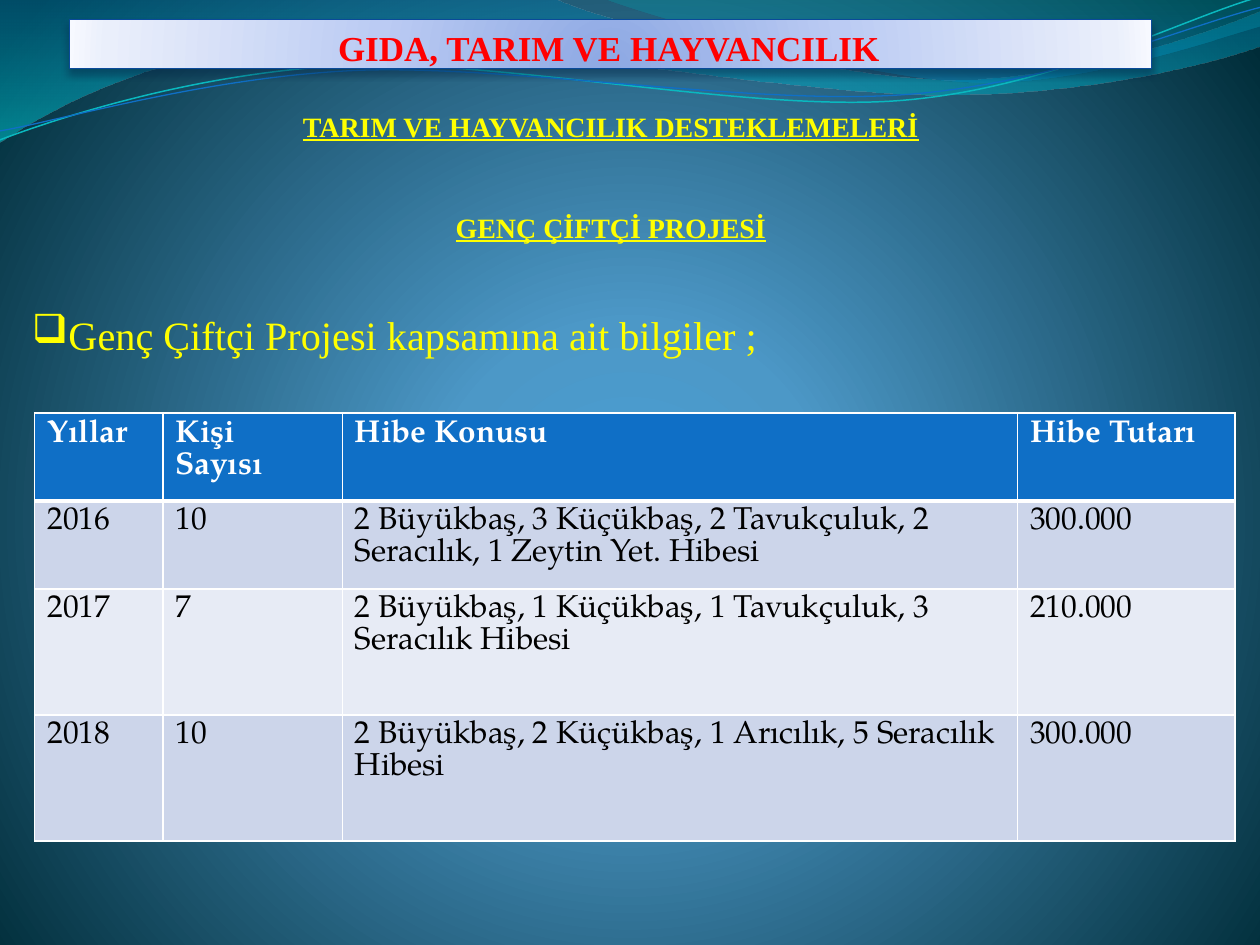
import math
from dataclasses import dataclass
from typing import Optional

import lxml.etree
import pptx
import pptx.dml.color
import pptx.enum.text
import pptx.oxml
import pptx.oxml.ns
import pptx.util

Cm, Pt = pptx.util.Cm, pptx.util.Pt
RGBColor = pptx.dml.color.RGBColor
ALIGN = pptx.enum.text.PP_ALIGN
qn = pptx.oxml.ns.qn
NAMESPACE = pptx.oxml.ns.nsdecls("a")

RED = RGBColor(0xFF, 0x00, 0x00)
YELLOW = RGBColor(0xFF, 0xFF, 0x00)
WHITE = RGBColor(0xFF, 0xFF, 0xFF)
BLACK = RGBColor(0x00, 0x00, 0x00)
BLUE = RGBColor(0x0F, 0x6F, 0xC6)
NAVY = RGBColor(0x0A, 0x4A, 0x9A)
TEAL = RGBColor(0x0A, 0xB8, 0xBF)
BAND_DARK = RGBColor(0xCC, 0xD5, 0xEA)
BAND_LIGHT = RGBColor(0xE7, 0xEB, 0xF5)
SHADOW = RGBColor(0x04, 0x27, 0x47)
SERIF = "Times New Roman"
TABLE_FONT = "TeX Gyre Pagella"

LINEAR_DOWN = '<a:lin ang="5400000" scaled="0"/>'
UNITS_PER_CM = 1000


@dataclass
class Stop:
    position: int
    color: RGBColor
    opacity: int = 100


@dataclass
class Wave:
    """Page points in cm; a pair is a straight step, six numbers a Bezier curve."""
    frame: tuple  # left, top, width, height before turning
    start: tuple
    steps: list
    gradient: Optional[list] = None
    line: Optional[RGBColor] = None
    width: float = 0
    rotation: float = 0


def circle_path(left: int, top: int, right: int, bottom: int) -> str:
    return (f'<a:path path="circle"><a:fillToRect l="{left}000" t="{top}000" '
            f'r="{right}000" b="{bottom}000"/></a:path>')


def set_gradient(fill, element, stops: list, direction: str) -> None:
    fill.gradient()
    old = element.find(".//" + qn("a:gradFill"))
    marks = "".join(
        f'<a:gs pos="{stop.position}000"><a:srgbClr val="{stop.color}">'
        f'<a:alpha val="{stop.opacity}000"/></a:srgbClr></a:gs>' for stop in stops)
    old.getparent().replace(old, pptx.oxml.parse_xml(
        f'<a:gradFill {NAMESPACE} rotWithShape="1"><a:gsLst>{marks}</a:gsLst>'
        f'{direction}</a:gradFill>'))


def point_xml(wave: Wave, x: float, y: float) -> str:
    """Turn a page point back into the unturned frame of the wave."""
    left, top, width, height = wave.frame
    angle = math.radians(-wave.rotation)
    dx, dy = x - left - width / 2, y - top - height / 2
    local_x = width / 2 + dx * math.cos(angle) - dy * math.sin(angle)
    local_y = height / 2 + dx * math.sin(angle) + dy * math.cos(angle)
    return f'<a:pt x="{round(local_x * UNITS_PER_CM)}" y="{round(local_y * UNITS_PER_CM)}"/>'


def draw_wave(page, wave: Wave) -> None:
    left, top, width, height = (value * UNITS_PER_CM for value in wave.frame)
    builder = page.shapes.build_freeform(left, top, scale=Cm(1) / UNITS_PER_CM)
    builder.add_line_segments([(left + width, top + height)], close=False)
    shape = builder.convert_to_shape()
    commands = f"<a:moveTo>{point_xml(wave, *wave.start)}</a:moveTo>"
    for step in wave.steps:
        tag = "lnTo" if len(step) == 2 else "cubicBezTo"
        points = "".join(point_xml(wave, *step[i:i + 2]) for i in range(0, len(step), 2))
        commands += f"<a:{tag}>{points}</a:{tag}>"
    if wave.gradient:
        commands += "<a:close/>"
    outline = shape.element.find(".//" + qn("a:pathLst"))
    outline.getparent().replace(outline, pptx.oxml.parse_xml(
        f'<a:pathLst {NAMESPACE}><a:path w="{round(width)}" h="{round(height)}">'
        f'{commands}</a:path></a:pathLst>'))
    shape.rotation = wave.rotation
    shape.shadow.inherit = False
    if wave.gradient:
        set_gradient(shape.fill, shape.element, wave.gradient, LINEAR_DOWN)
        shape.line.fill.background()
    else:
        shape.fill.background()
        shape.line.color.rgb = wave.line
        shape.line.width = Pt(wave.width)


def write_text(para, text: str, *, size: float, color: RGBColor, font: str = SERIF,
               bold: bool = False, underline: bool = False, align=ALIGN.LEFT,
               before: float = 0, spacing=None) -> None:
    para.alignment = align
    para.space_before = Pt(before)
    if spacing:
        para.line_spacing = spacing
    span = para.add_run()
    span.text = text
    span.font.name, span.font.size = font, Pt(size)
    span.font.bold, span.font.underline = bold, underline
    span.font.color.rgb = color


def format_cell(cell, text: str, fill: RGBColor, color: RGBColor, header: bool,
                below_header: bool) -> None:
    write_text(cell.text_frame.paragraphs[0], text, size=18, color=color,
               font=TABLE_FONT, bold=header, spacing=Pt(18))
    properties = cell._tc.get_or_add_tcPr()
    widths = {"L": 1, "R": 1, "T": 3 if below_header else 1, "B": 3 if header else 1}
    for side, width in widths.items():
        properties.append(pptx.oxml.parse_xml(
            f'<a:ln{side} {NAMESPACE} w="{Pt(width)}"><a:solidFill>'
            f'<a:srgbClr val="{WHITE}"/></a:solidFill></a:ln{side}>'))
    cell.fill.solid()
    cell.fill.fore_color.rgb = fill


deck = pptx.Presentation()
deck.slide_width, deck.slide_height = Cm(25.4), Cm(19.05)
page = deck.slides.add_slide(deck.slide_layouts[5])

# Background
set_gradient(page.background.fill, page.element,
             [Stop(0, RGBColor(0x4A, 0xA0, 0xD6)), Stop(25, RGBColor(0x4C, 0x98, 0xC7)),
              Stop(100, RGBColor(0x00, 0x2C, 0x38))], circle_path(10, 110, 10, 100))

# Waves along the top
WAVES = [
    Wave((-0.03, -0.03, 25.46, 2.9), (0, 0),
         [(11.18, -0.03), (12.09, 0.43, 16.87, 1.6, 19.25, 1.6),
          (21.67, 1.6, 24.33, 0.66, 25.4, 0.23), (25.43, 0.91),
          (24.97, 1.12, 22.1, 1.93, 18.95, 1.91), (15.8, 1.91, 9.7, 0.71, 6.53, 0.86),
          (3.28, 0.91, 1.17, 2.11, -0.03, 2.87), (0, 0)],
         gradient=[Stop(0, RGBColor(0x00, 0x74, 0xA1), 45),
                   Stop(100, RGBColor(0x00, 0xC6, 0xCF), 55)]),
    Wave((12.17, -0.03, 13.23, 1.78), (12.17, -0.03),
         [(12.93, 0.28, 17.32, 1.57, 19.53, 1.65), (21.74, 1.75, 24.41, 0.81, 25.4, 0.53),
          (25.4, 0), (12.17, -0.03)],
         gradient=[Stop(0, RGBColor(0x00, 0xA1, 0xA9), 30),
                   Stop(80, RGBColor(0x00, 0x8B, 0xBF), 45)]),
    Wave((-0.05, 0.56, 25.45, 1.8), (0, 2.82),
         [(1.22, 2.36, 4.01, 1.45, 7.04, 1.32), (10.03, 1.19, 15.06, 2.26, 18.11, 2.03),
          (21.16, 1.8, 23.83, 0.38, 25.35, -0.05)], line=TEAL, width=0.85, rotation=357.3),
    Wave((-0.05, 0.76, 25.48, 1.47), (0, 2.64),
         [(1.19, 2.44, 4.17, 1.55, 7.19, 1.42), (10.24, 1.3, 15.16, 2.13, 18.21, 1.91),
          (21.23, 1.7, 23.9, 0.53, 25.4, 0.15)], line=BLUE, width=0.75, rotation=357.3),
]
for wave in WAVES:
    draw_wave(page, wave)

# Title bar, brought in front of the waves
title = page.shapes.title
title.element.getparent().append(title.element)
title.left, title.top, title.width, title.height = Cm(1.39), Cm(0.39), Cm(21.82), Cm(0.99)
set_gradient(title.fill, title.element,
             [Stop(0, RGBColor(0x8D, 0xA8, 0xE3)), Stop(43, RGBColor(0xBB, 0xCB, 0xF3)),
              Stop(93, RGBColor(0xEA, 0xEF, 0xFB)), Stop(100, RGBColor(0xF7, 0xF9, 0xFF))],
             circle_path(50, 130, 50, -30))
title.line.color.rgb = NAVY
title.line.width = Pt(0.5)
title.shadow.inherit = False
title.element.spPr.find(qn("a:effectLst")).append(pptx.oxml.parse_xml(
    f'<a:outerShdw {NAMESPACE} blurRad="{Pt(4.5)}" dist="{Pt(3)}" dir="5400000">'
    f'<a:srgbClr val="{SHADOW}"><a:alpha val="48000"/></a:srgbClr></a:outerShdw>'))
frame = title.text_frame
frame.auto_size = pptx.enum.text.MSO_AUTO_SIZE.NONE
frame.vertical_anchor = pptx.enum.text.MSO_ANCHOR.BOTTOM
frame.margin_left = frame.margin_top = frame.margin_bottom = 0
frame.margin_right = Cm(0.05)
write_text(frame.paragraphs[0], "GIDA, TARIM VE HAYVANCILIK", size=20, color=RED,
           bold=True, align=ALIGN.CENTER)

# Headings and bulleted line
box = page.shapes.add_textbox(Cm(0.4), Cm(1.4), Cm(23.83), Cm(19.1))
frame = box.text_frame
frame.word_wrap = True
frame.margin_top = Cm(0.8)
heading = dict(size=16, color=YELLOW, bold=True, underline=True, align=ALIGN.CENTER)
write_text(frame.paragraphs[0], "TARIM VE HAYVANCILIK DESTEKLEMELERİ", **heading)
write_text(frame.add_paragraph(), "GENÇ ÇİFTÇİ PROJESİ", before=38.5, **heading)
bullet_para = frame.add_paragraph()
write_text(bullet_para, "Genç Çiftçi Projesi kapsamına ait bilgiler ;", size=23,
           color=YELLOW, align=ALIGN.JUSTIFY, before=38)
bullet_format = bullet_para._p.get_or_add_pPr()
lxml.etree.SubElement(bullet_format, qn("a:buFont")).set("typeface", "Wingdings")
lxml.etree.SubElement(bullet_format, qn("a:buChar")).set("char", "q")

# Grant table
ROWS = [
    ("Yıllar", "Kişi Sayısı", "Hibe Konusu", "Hibe Tutarı"),
    ("2016", "10", "2 Büyükbaş, 3 Küçükbaş, 2 Tavukçuluk, 2 Seracılık, 1 Zeytin Yet. Hibesi",
     "300.000"),
    ("2017", "7", "2 Büyükbaş, 1 Küçükbaş, 1 Tavukçuluk, 3 Seracılık Hibesi", "210.000"),
    ("2018", "10", "2 Büyükbaş, 2 Küçükbaş, 1 Arıcılık, 5 Seracılık Hibesi", "300.000"),
]
COLUMN_WIDTHS = (2.59, 3.61, 13.61, 4.39)
ROW_HEIGHTS = (1.77, 1.77, 2.54, 2.54)
table = page.shapes.add_table(len(ROWS), len(COLUMN_WIDTHS), Cm(0.7), Cm(8.33),
                              Cm(sum(COLUMN_WIDTHS)), Cm(sum(ROW_HEIGHTS))).table
for column, width in zip(table.columns, COLUMN_WIDTHS):
    column.width = Cm(width)
for number, (row, height, texts) in enumerate(zip(table.rows, ROW_HEIGHTS, ROWS)):
    row.height = Cm(height)
    header = number == 0
    fill = BLUE if header else (BAND_LIGHT, BAND_DARK)[number % 2]
    for cell, text in zip(row.cells, texts):
        format_cell(cell, text, fill, WHITE if header else BLACK, header, number == 1)

deck.save("out.pptx")
